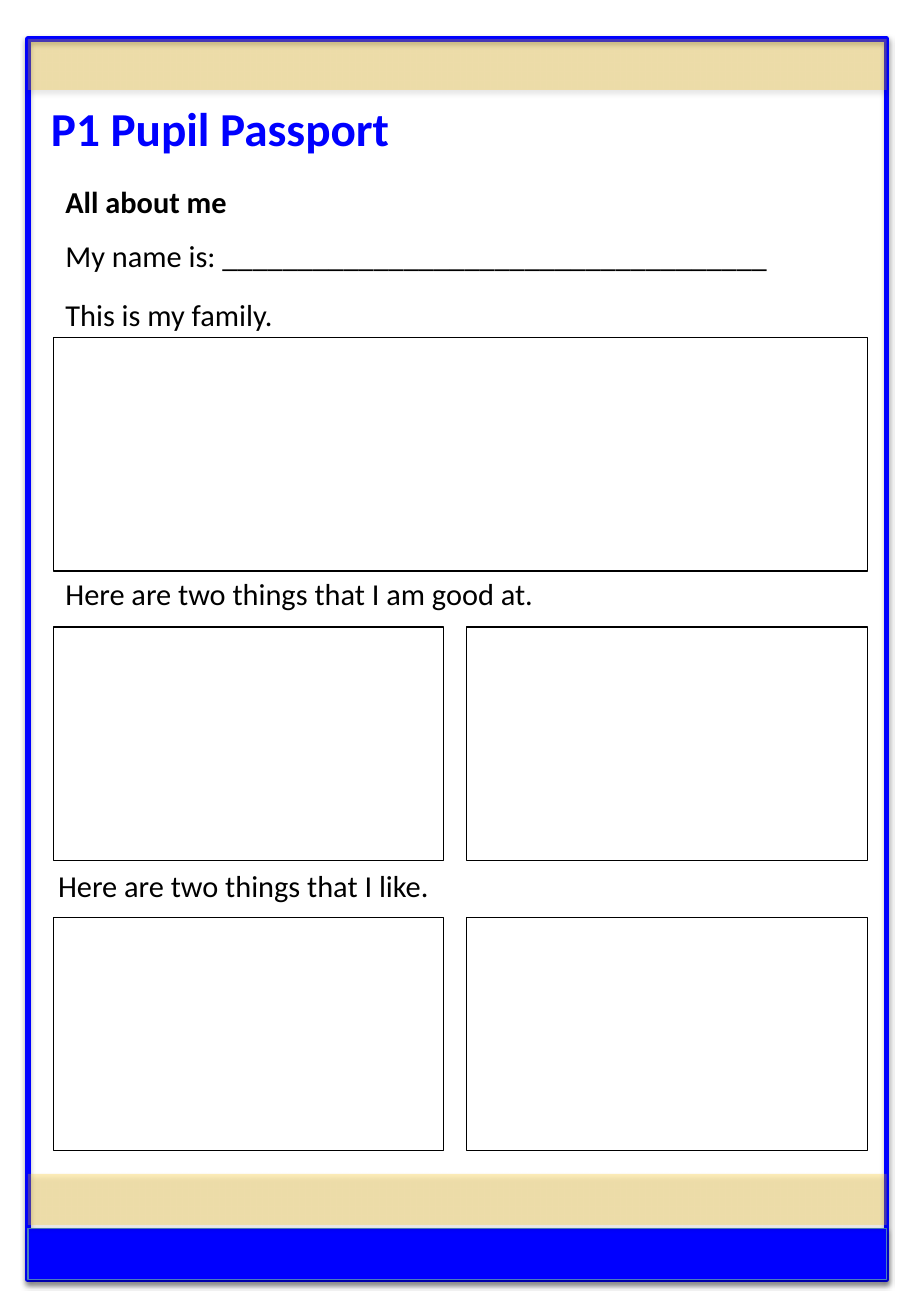
from lxml import etree
from pptx import Presentation
from pptx.dml.color import RGBColor
from pptx.enum.shapes import MSO_SHAPE as SHAPE
from pptx.oxml import parse_xml
from pptx.oxml.ns import nsdecls, qn
from pptx.util import Emu, Pt

PX = 9144  # 100 px to the inch
BLUE = RGBColor(0x00, 0x00, 0xFF)
GOLD = RGBColor(0xFE, 0xC3, 0x09)
BLACK = RGBColor(0x00, 0x00, 0x00)
EDGE = RGBColor(0x4B, 0x7E, 0xBC)
OUTLINE = RGBColor(0x05, 0x46, 0x97)

BODY = {"name": "Calibri", "size": Pt(18), "bold": False}
HEADING = {**BODY, "bold": True}
TITLE = {**HEADING, "size": Pt(28)}

SHADOW = f"""<a:effectLst {nsdecls('a')}>
  <a:outerShdw blurRad="39370" dist="22860" dir="5400000" rotWithShape="0">
    <a:srgbClr val="000000"><a:alpha val="35000"/></a:srgbClr>
  </a:outerShdw>
</a:effectLst>"""


def px(*lengths):
    return [Emu(n * PX) for n in lengths]


def add_rect(slide, box, fill=None, alpha=None, line=None, width=0.75, shadow=False):
    sp = slide.shapes.add_shape(SHAPE.RECTANGLE, *px(*box))
    sp.shadow.inherit = False
    if fill is None:
        sp.fill.background()
    else:
        sp.fill.solid()
        sp.fill.fore_color.rgb = fill
    if alpha:
        color = sp.fill._xPr.find(qn("a:solidFill"))[0]
        etree.SubElement(color, qn("a:alpha")).set("val", str(alpha * 1000))
    if line is None:
        sp.line.fill.background()
    else:
        sp.line.color.rgb = line
        sp.line.width = Pt(width)
    if shadow:
        effects = sp._element.spPr.find(qn("a:effectLst"))
        effects.getparent().replace(effects, parse_xml(SHADOW))


def add_text(slide, box, text, style=BODY, color=BLACK, inset=10):
    tf = slide.shapes.add_textbox(*px(*box)).text_frame
    tf.word_wrap = True
    tf.margin_left = Emu(inset * PX)
    r = tf.paragraphs[0].add_run()
    r.text = text
    for name, value in style.items():
        setattr(r.font, name, value)
    r.font.color.rgb = color
    return r


def add_frame(slide, x, y, w, h):
    band = 42
    add_rect(slide, (x, y, w, h), line=BLUE, width=3.25, shadow=True)
    # Gold band at the top, blue and gold bands at the foot
    add_rect(slide, (x, y, w, band), GOLD, 28, shadow=True)
    add_rect(slide, (x, y + h - band, w, band), BLUE, line=EDGE, shadow=True)
    add_rect(slide, (x, y + h - 87, w, band), GOLD, 28, shadow=True)


def add_header(slide, x, y, w):
    r = add_text(slide, (x, y, w, 57), "P1 Pupil Passport", TITLE, BLUE, inset=19)
    r._r.get_or_add_rPr().insert(0, parse_xml(
        f'<a:ln {nsdecls("a")} w="12700"><a:solidFill>'
        f'<a:srgbClr val="{OUTLINE}"/></a:solidFill></a:ln>'))
    left = x + 21
    add_text(slide, (left, y + 69, 284, 40), "All about me", HEADING)
    add_text(slide, (left, y + 113, 653, 71), "My name is: " + "_" * 36)


def add_drawing_section(slide, x, y, widths, prompt, prompt_x, prompt_y):
    right = x + 670
    for i, w in enumerate(widths):
        left = x if i == 0 else right - w
        add_rect(slide, (left, y, w, 192), line=BLACK)
    add_text(slide, (prompt_x, prompt_y, 653, 71), prompt)


def main():
    prs = Presentation()
    prs.slide_width, prs.slide_height = px(750, 1083)
    slide = prs.slides.add_slide(prs.slide_layouts[6])
    add_frame(slide, 23, 32, 707, 1021)
    add_header(slide, 23, 77, 707)
    # Boxes to draw in, each row under its prompt
    sections = [
        (278, [670], "This is my family.", 44, 239),
        (516, [321, 330], "Here are two things that I am good at.", 44, 468),
        (755, [321, 330], "Here are two things that I like.", 38, 709),
    ]
    for y, widths, prompt, prompt_x, prompt_y in sections:
        add_drawing_section(slide, 44, y, widths, prompt, prompt_x, prompt_y)
    prs.save("out.pptx")


if __name__ == "__main__":
    main()
